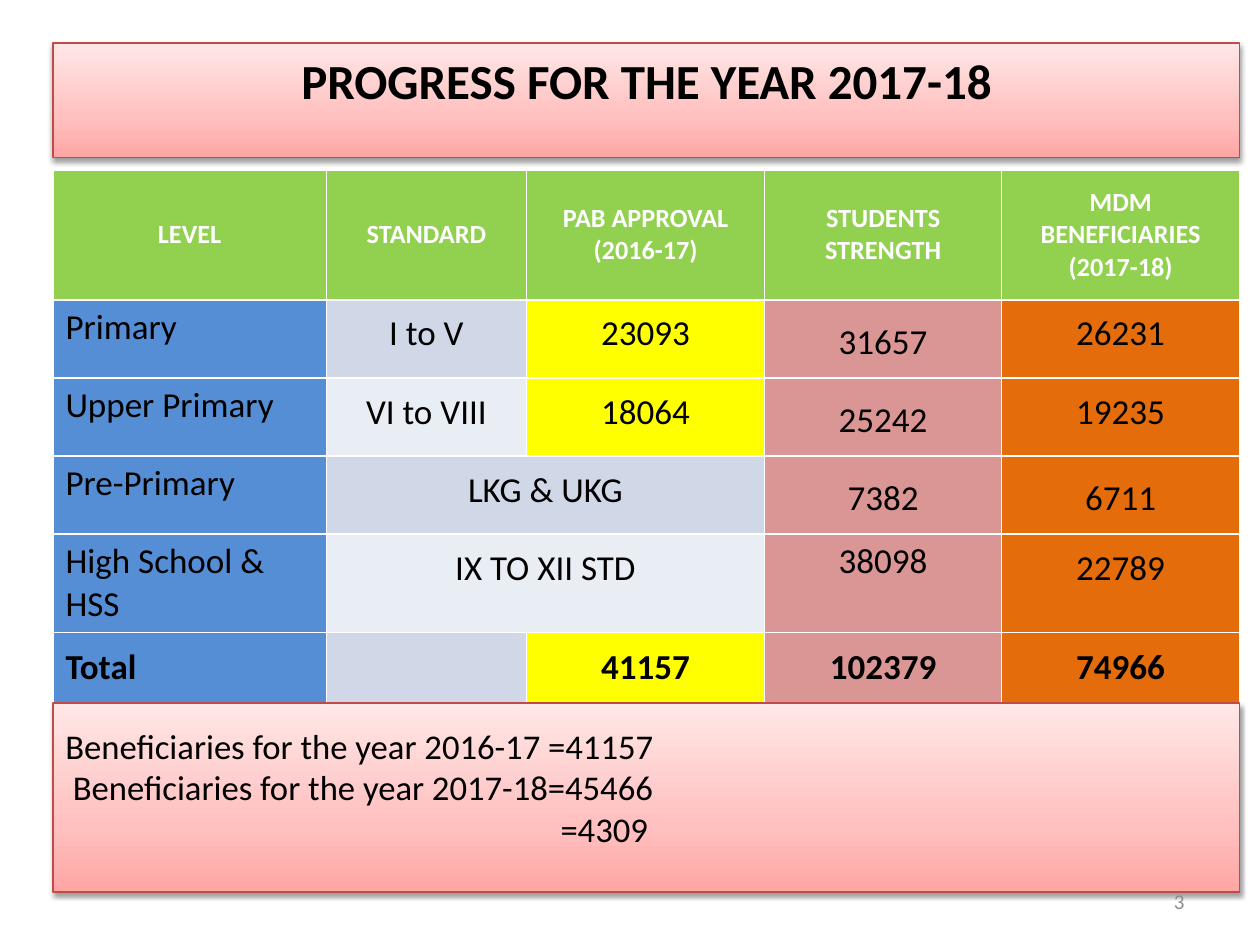
from copy import deepcopy

from lxml.etree import SubElement
from pptx import Presentation
from pptx.dml.color import RGBColor
from pptx.enum.shapes import MSO_SHAPE
from pptx.enum.text import MSO_ANCHOR, PP_ALIGN
from pptx.oxml.ns import qn
from pptx.util import Inches, Pt

FONT = "Calibri"
BLACK = RGBColor(0x00, 0x00, 0x00)
WHITE = RGBColor(0xFF, 0xFF, 0xFF)
GREY = RGBColor(0x8C, 0x8C, 0x8C)
GREEN = RGBColor(0x92, 0xD0, 0x50)
BLUE = RGBColor(0x55, 0x8E, 0xD5)
YELLOW = RGBColor(0xFF, 0xFF, 0x00)
ROSE = RGBColor(0xD9, 0x96, 0x94)
ORANGE = RGBColor(0xE4, 0x6C, 0x0A)
BAND_DARK = RGBColor(0xD0, 0xD8, 0xE8)
BAND_LIGHT = RGBColor(0xE9, 0xED, 0xF4)
PANEL_LINE = RGBColor(0xBF, 0x4C, 0x48)
PANEL_STOPS = [
    (0, RGBColor(0xFF, 0xA6, 0xA5)),
    (0.35, RGBColor(0xFF, 0xC0, 0xBF)),
    (1, RGBColor(0xFF, 0xE7, 0xE7)),
]

LEFT, WIDTH = Inches(0.42), Inches(9.42)
COLUMN_WIDTHS = [2.17, 1.59, 1.89, 1.88, 1.89]
ROW_HEIGHTS = [1.03, 0.62, 0.62, 0.62, 0.76, 0.56]
HEADINGS = ["LEVEL", "STANDARD", "PAB APPROVAL (2016-17)",
            "STUDENTS STRENGTH", "MDM BENEFICIARIES (2017-18)"]
# None: the standard spans the approval column too
LEVELS = [
    ["Primary", "I to V", "23093", "31657", "26231"],
    ["Upper Primary", "VI to VIII", "18064", "25242", "19235"],
    ["Pre-Primary", "LKG & UKG", None, "7382", "6711"],
    ["High School & HSS", "IX TO XII STD", None, "38098", "22789"],
]
TOTALS = ["Total", "", "41157", "102379", "74966"]
BENEFICIARIES = [
    ("Beneficiaries for the year 2016-17 =41157", 0),
    ("Beneficiaries for the year 2017-18=45466", 0.06),
    ("=4309", 3.93),
]


def style_text(paragraph, size, color=BLACK, bold=False, align=PP_ALIGN.LEFT):
    paragraph.alignment = align
    font = paragraph.font
    font.name, font.size, font.bold = FONT, Pt(size), bold
    font.color.rgb = color


def add_shadow(shape):
    shape.shadow.inherit = False
    effects = shape._element.spPr.find(qn("a:effectLst"))
    outer = SubElement(effects, qn("a:outerShdw"), blurRad=str(Pt(3.1)),
                       dist=str(Pt(1.6)), dir="5400000", rotWithShape="0")
    black = SubElement(outer, qn("a:srgbClr"), val="000000")
    SubElement(black, qn("a:alpha"), val="38000")


def add_panel(slide, left, top, width, height, inset):
    """Add a pink gradient panel and return its text frame."""
    panel = slide.shapes.add_shape(MSO_SHAPE.RECTANGLE, left, top, width, height)
    panel.fill.gradient()
    panel.fill.gradient_angle = 90
    stops = panel._element.spPr.find(".//" + qn("a:gsLst"))
    stops.append(deepcopy(stops[0]))
    for stop, (position, color) in zip(panel.fill.gradient_stops, PANEL_STOPS):
        stop.position = position
        stop.color.rgb = color
    panel.line.color.rgb = PANEL_LINE
    panel.line.width = Pt(0.75)
    add_shadow(panel)
    frame = panel.text_frame
    frame.word_wrap = True
    frame.vertical_anchor = MSO_ANCHOR.TOP
    frame.margin_top = inset
    return frame


def add_title(slide, left, top, width, height):
    title = add_panel(slide, left, top, width, height, Inches(0.06)).paragraphs[0]
    title.text = "PROGRESS FOR THE YEAR 2017-18"
    style_text(title, 28, bold=True, align=PP_ALIGN.CENTER)


def fill_cell(cell, text, fill, size=20, color=BLACK, bold=False,
              align=PP_ALIGN.CENTER, anchor=MSO_ANCHOR.TOP):
    cell.fill.solid()
    cell.fill.fore_color.rgb = fill
    cell.vertical_anchor = anchor
    paragraph = cell.text_frame.paragraphs[0]
    paragraph.text = text
    style_text(paragraph, size, color, bold, align)
    return paragraph


def fill_level_row(table, row, values):
    band = BAND_DARK if row % 2 else BAND_LIGHT
    fills = [BLUE, band, YELLOW, ROSE, ORANGE]
    if values[2] is None:
        table.cell(row, 1).merge(table.cell(row, 2))
    for column, (value, fill) in enumerate(zip(values, fills)):
        if value is None:
            continue
        cell = table.cell(row, column)
        if column == 0:
            fill_cell(cell, value, fill, align=PP_ALIGN.LEFT)
            continue
        paragraph = fill_cell(cell, value, fill)
        if value == "38098":
            continue
        paragraph.line_spacing = 1.15
        paragraph.space_after = Pt(10)
        if column == 3 or value == "6711":
            cell.vertical_anchor = MSO_ANCHOR.MIDDLE
            cell.margin_left = cell.margin_right = Inches(0.07)
            cell.margin_top = cell.margin_bottom = 0


def add_progress_table(slide, left, top, width, height):
    table = slide.shapes.add_table(len(ROW_HEIGHTS), len(COLUMN_WIDTHS),
                                   left, top, width, height).table
    table.horz_banding = False
    for column, column_width in zip(table.columns, COLUMN_WIDTHS):
        column.width = Inches(column_width)
    for row, row_height in zip(table.rows, ROW_HEIGHTS):
        row.height = Inches(row_height)

    for column, heading in enumerate(HEADINGS):
        fill_cell(table.cell(0, column), heading, GREEN, 15, WHITE, True,
                  anchor=MSO_ANCHOR.MIDDLE)
    for row, values in enumerate(LEVELS, start=1):
        fill_level_row(table, row, values)
    total_fills = [BLUE, BAND_DARK, YELLOW, ROSE, ORANGE]
    for column, (value, fill) in enumerate(zip(TOTALS, total_fills)):
        align = PP_ALIGN.CENTER if column else PP_ALIGN.LEFT
        fill_cell(table.cell(len(LEVELS) + 1, column), value, fill, bold=True,
                  align=align, anchor=MSO_ANCHOR.MIDDLE)


def add_beneficiaries(slide, left, top, width, height):
    frame = add_panel(slide, left, top, width, height, Inches(0.17))
    for index, (text, indent) in enumerate(BENEFICIARIES):
        paragraph = frame.add_paragraph() if index else frame.paragraphs[0]
        paragraph.text = text
        style_text(paragraph, 19.8)
        paragraph._p.get_or_add_pPr().set("marL", str(Inches(indent)))


def add_page_number(slide, left, top, width, height):
    frame = slide.shapes.add_textbox(left, top, width, height).text_frame
    frame.word_wrap = True
    frame.vertical_anchor = MSO_ANCHOR.MIDDLE
    frame.text = "3"
    style_text(frame.paragraphs[0], 12, GREY, align=PP_ALIGN.RIGHT)


def main():
    deck = Presentation()
    deck.slide_width, deck.slide_height = Inches(10), Inches(7.5)
    slide = deck.slides.add_slide(deck.slide_layouts[6])
    add_title(slide, LEFT, Inches(0.34), WIDTH, Inches(0.91))
    add_progress_table(slide, LEFT, Inches(1.35), WIDTH, Inches(4.23))
    add_beneficiaries(slide, LEFT, Inches(5.58), WIDTH, Inches(1.5))
    add_page_number(slide, Inches(7.17), Inches(6.95), Inches(2.33), Inches(0.4))
    deck.save("out.pptx")


if __name__ == "__main__":
    main()
